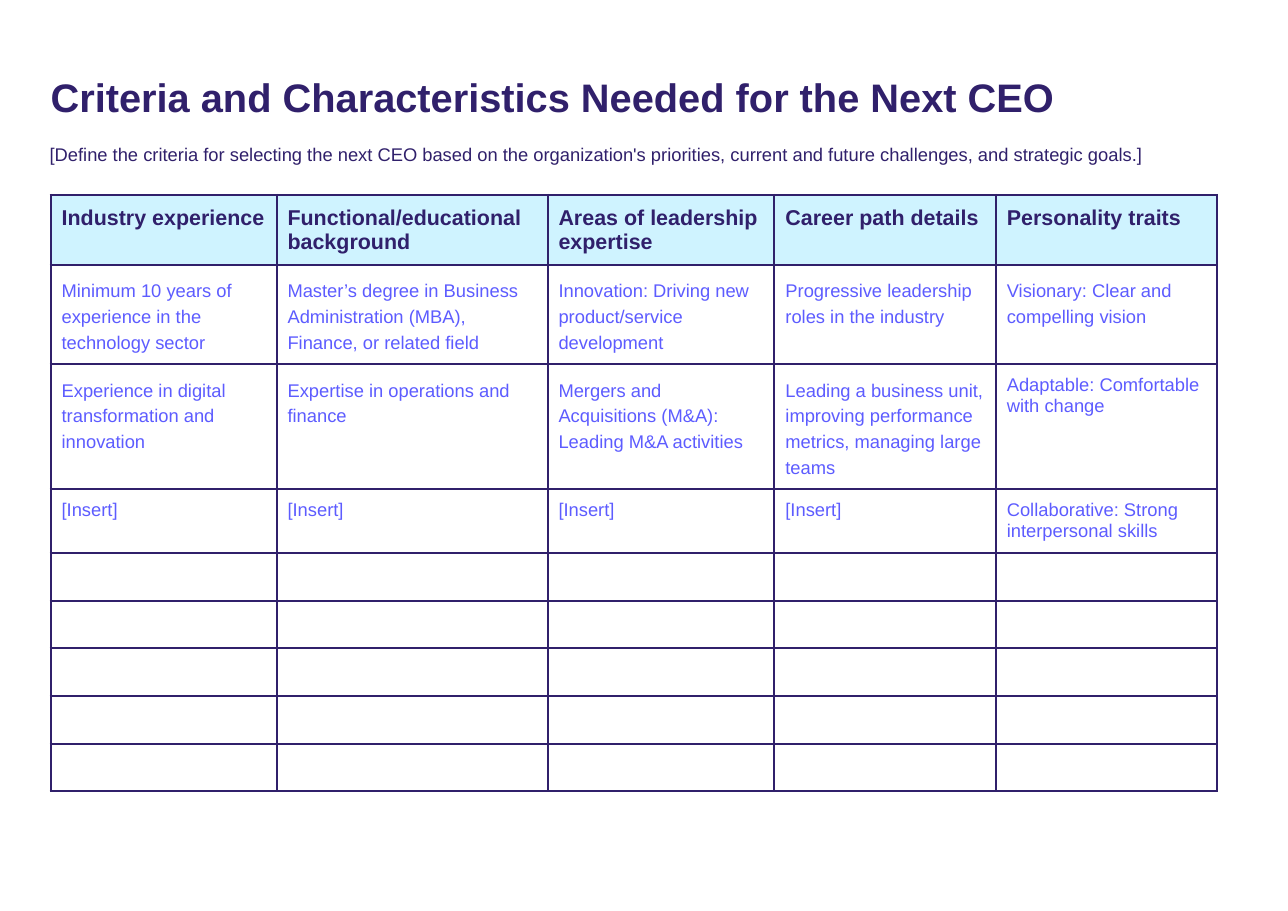
"""Build the slide on criteria for choosing the next CEO."""
from dataclasses import dataclass

from lxml.etree import SubElement
from pptx import Presentation
from pptx.dml.color import RGBColor
from pptx.enum.text import MSO_ANCHOR, MSO_AUTO_SIZE, PP_ALIGN
from pptx.oxml.ns import qn
from pptx.table import Table, _Cell
from pptx.text.text import TextFrame
from pptx.util import Emu, Inches, Pt

SLIDE_W, SLIDE_H = Inches(11.69), Inches(8.27)
COLORS = {"ink": "30206B", "entry": "5D5CFF", "header": "CFF3FF"}
PLAIN_TABLE = "{2D5ABB26-0587-4C30-8999-92F81FD0307C}"


@dataclass(frozen=True)
class Style:
    """Look of a paragraph."""
    size: float
    color: str
    bold: bool = False
    spacing: float = 1.0


@dataclass(frozen=True)
class Box:
    """Place of an object in percent of the slide."""
    left: float
    top: float
    width: float
    height: float


@dataclass(frozen=True)
class Row:
    """Table row: height in percent of the slide, and its texts."""
    height: float
    texts: tuple[str, ...]
    styles: tuple[Style, ...]
    fill: str | None = None


TITLE = Style(26, "ink", True, 1.15)
INTRO = Style(12, "ink", spacing=1.25)
HEADER = Style(14, "ink", True)
ENTRY = Style(12, "entry", spacing=1.25)
TIGHT = Style(12, "entry")

TITLE_BOX = Box(3.93, 6.89, 80.5, 6.65)
INTRO_BOX = Box(3.85, 15.12, 92.2, 2.9)
TABLE_LEFT, TABLE_TOP = 3.93, 21.4
COLUMNS = (17.54, 21.04, 17.62, 17.19, 17.19)
EMPTY_ROW = Row(5.24, ("",) * 5, (TIGHT,) * 5)
ROWS = (
    Row(7.68, ("Industry experience", "Functional/educational\nbackground",
               "Areas of leadership expertise", "Career path details",
               "Personality traits"), (HEADER,) * 5, "header"),
    Row(10.88, ("Minimum 10 years of experience in the technology sector",
                "Master’s degree in Business Administration (MBA), Finance, or related field",
                "Innovation: Driving new product/service development",
                "Progressive leadership roles in the industry",
                "Visionary: Clear and compelling vision"), (ENTRY,) * 5),
    Row(13.6, ("Experience in digital transformation and innovation",
               "Expertise in operations and finance",
               "Mergers and Acquisitions (M&A): Leading M&A activities",
               "Leading a business unit, improving performance metrics, managing large teams",
               "Adaptable: Comfortable with change"), (ENTRY,) * 4 + (TIGHT,)),
    Row(7.01, ("[Insert]",) * 4 + ("Collaborative: Strong interpersonal skills",),
        (TIGHT,) * 5),
    *(EMPTY_ROW,) * 5,
)


def across(share: float) -> Emu:
    """Turn a percentage of the slide width into a length."""
    return Emu(round(SLIDE_W * share / 100))


def down(share: float) -> Emu:
    """Turn a percentage of the slide height into a length."""
    return Emu(round(SLIDE_H * share / 100))


def place(sp, box: Box) -> None:
    """Move and size a shape."""
    sp.left, sp.top = across(box.left), down(box.top)
    sp.width, sp.height = across(box.width), down(box.height)


def write(tf: TextFrame, text: str, style: Style) -> None:
    """Fill a text frame and format its paragraphs."""
    tf.text = text
    for p in tf.paragraphs:
        p.alignment = PP_ALIGN.LEFT
        p.line_spacing = style.spacing
        p.font.name, p.font.size, p.font.bold = "Arial", Pt(style.size), style.bold
        p.font.color.rgb = RGBColor.from_string(COLORS[style.color])


def write_box(sp, box: Box, text: str, style: Style, anchor: MSO_ANCHOR) -> None:
    """Place a text shape without insets and write into it."""
    place(sp, box)
    tf = sp.text_frame
    tf.word_wrap, tf.auto_size = True, MSO_AUTO_SIZE.NONE
    tf.vertical_anchor = anchor
    tf.margin_left = tf.margin_right = tf.margin_top = tf.margin_bottom = 0
    write(tf, text, style)


def add_borders(cell: _Cell) -> None:
    """Draw a line on all four sides of a cell."""
    tc_pr = cell._tc.get_or_add_tcPr()
    for side in ("a:lnL", "a:lnR", "a:lnT", "a:lnB"):
        ln = SubElement(tc_pr, qn(side), w=str(Pt(1.5)))
        fill = SubElement(ln, qn("a:solidFill"))
        SubElement(fill, qn("a:srgbClr"), val=COLORS["ink"])


def fill_row(table: Table, index: int, row: Row) -> None:
    """Write and format one table row."""
    table.rows[index].height = down(row.height)
    for cell, text, style in zip(table.rows[index].cells, row.texts, row.styles):
        write(cell.text_frame, text, style)
        if text:
            cell.margin_left = cell.margin_right = Inches(0.1)
            cell.margin_top = cell.margin_bottom = Inches(0.1)
        add_borders(cell)
        if row.fill:
            cell.fill.solid()
            cell.fill.fore_color.rgb = RGBColor.from_string(COLORS[row.fill])
        else:
            cell.fill.background()


def main() -> None:
    """Create and save the presentation."""
    prs = Presentation()
    prs.slide_width, prs.slide_height = SLIDE_W, SLIDE_H
    s = prs.slides.add_slide(prs.slide_layouts.get_by_name("Title Only"))
    write_box(s.shapes.title, TITLE_BOX,
              "Criteria and Characteristics Needed for the Next CEO",
              TITLE, MSO_ANCHOR.MIDDLE)
    write_box(s.shapes.add_textbox(0, 0, 0, 0), INTRO_BOX,
              "[Define the criteria for selecting the next CEO based on the organization's "
              "priorities, current and future challenges, and strategic goals.]",
              INTRO, MSO_ANCHOR.TOP)

    table = s.shapes.add_table(
        len(ROWS), len(COLUMNS), across(TABLE_LEFT), down(TABLE_TOP),
        across(sum(COLUMNS)), down(sum(row.height for row in ROWS))).table
    table.first_row = table.horz_banding = False
    table._tbl.tblPr.find(qn("a:tableStyleId")).text = PLAIN_TABLE
    for column, width in zip(table.columns, COLUMNS):
        column.width = across(width)
    for index, row in enumerate(ROWS):
        fill_row(table, index, row)
    prs.save("out.pptx")


if __name__ == "__main__":
    main()
